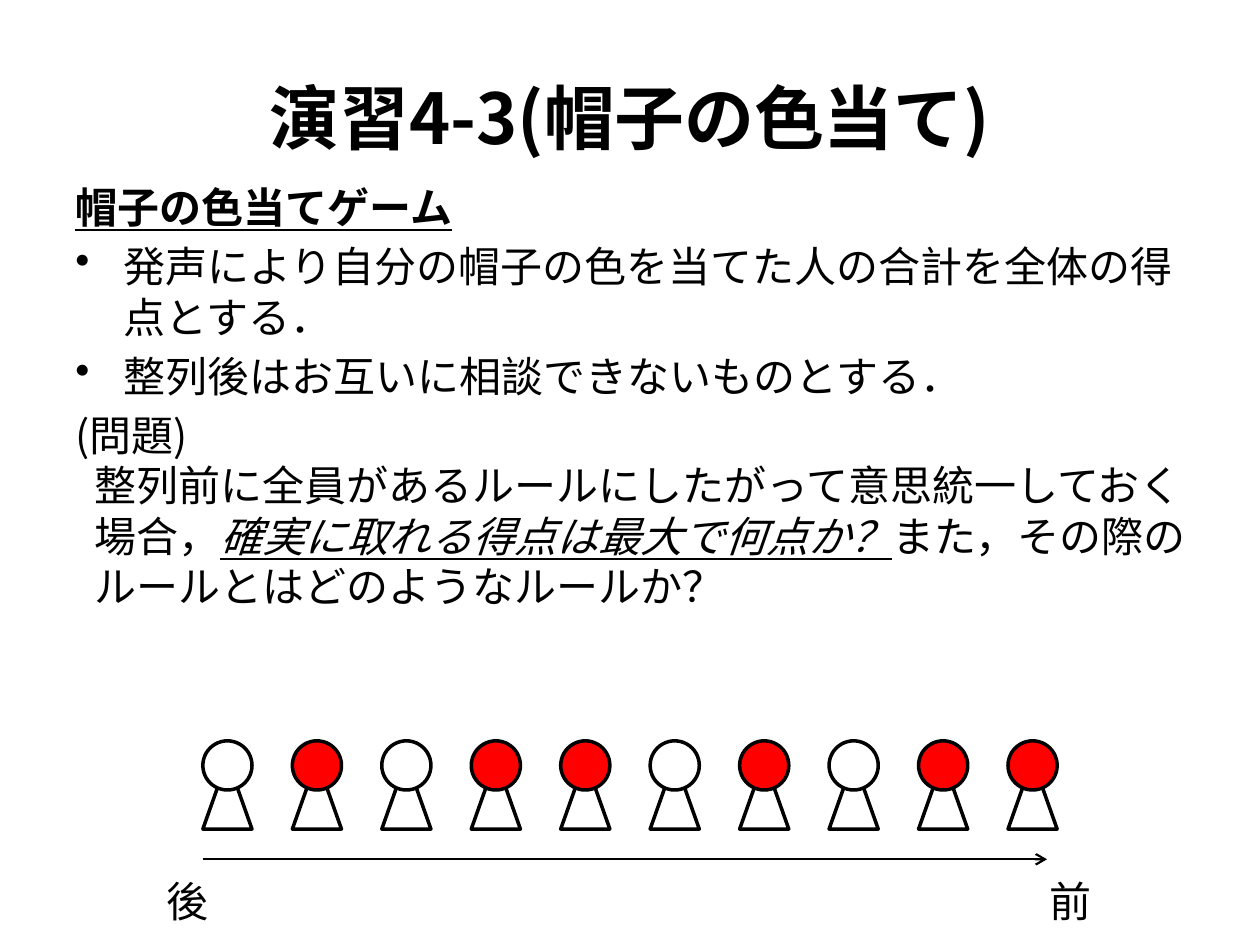
from lxml import etree
from pptx import Presentation
from pptx import util as u
from pptx.dml.color import RGBColor
from pptx.enum import shapes, text
from pptx.oxml import ns

FONT = "Noto Sans CJK JP"
BLACK, WHITE, RED = "000000", "FFFFFF", "FF0000"


def color(value):
    return RGBColor.from_string(value)


def format_runs(paragraph, size, bold=False):
    for run in paragraph.runs:
        run.font.size = u.Pt(size)
        run.font.bold = bold
        run.font.color.rgb = color(BLACK)
        run.font.name = FONT
        east_asian = etree.SubElement(run.font._element, ns.qn("a:ea"))
        east_asian.set("typeface", FONT)


presentation = Presentation()
presentation.slide_width, presentation.slide_height = u.Inches(10), u.Inches(7.5)
slide = presentation.slides.add_slide(presentation.slide_layouts[6])

# Title
title = slide.shapes.add_textbox(u.Inches(0.5), u.Inches(0.3), u.Inches(9), u.Inches(1.25))
title.text_frame.word_wrap = True
title.text_frame.vertical_anchor = text.MSO_ANCHOR.MIDDLE
title.text_frame.text = "演習4-3(帽子の色当て)"
title.text_frame.paragraphs[0].alignment = text.PP_ALIGN.CENTER
format_runs(title.text_frame.paragraphs[0], 40, bold=True)

# Rules and question: style, then runs (the second run is emphasised)
lines = [
    ("heading", ["帽子の色当てゲーム"]),
    ("bullet", ["発声により自分の帽子の色を当てた人の合計を全体の得点とする．"]),
    ("bullet", ["整列後はお互いに相談できないものとする．"]),
    ("plain", ["(問題)"]),
    ("question", ["整列前に全員があるルールにしたがって意思統一しておく"]),
    ("question", ["場合，", "確実に取れる得点は最大で何点か？", "また，その際の"]),
    ("question", ["ルールとはどのようなルールか？"]),
]
body = slide.shapes.add_textbox(u.Inches(0.5), u.Inches(1.39), u.Inches(9.15), u.Inches(5.98))
body.text_frame.word_wrap = True
for index, (style, parts) in enumerate(lines):
    paragraph = body.text_frame.paragraphs[0] if index == 0 else body.text_frame.add_paragraph()
    for part in parts:
        paragraph.add_run().text = part
    format_runs(paragraph, 24, bold=style == "heading")
    paragraph.line_spacing = u.Pt(28.9)
    paragraph.space_before = u.Pt(0 if style == "question" else 4.8)
    properties = paragraph._p.get_or_add_pPr()
    if style == "heading":
        paragraph.runs[0].font.underline = True
    elif style == "bullet":
        properties.set("marL", str(u.Inches(0.38)))
        properties.set("indent", str(u.Inches(-0.38)))
        etree.SubElement(properties, ns.qn("a:buChar")).set("char", "•")
    elif style == "question":
        properties.set("marL", str(u.Inches(0.15)))
    for run in paragraph.runs[1:2]:
        run.font.italic = run.font.underline = True

# Row of people, each a triangle body under a round hat
first, pitch, width = 1.61, 0.71, 0.39
hats = [WHITE, RED, WHITE, RED, RED, WHITE, RED, WHITE, RED, RED]
for column, hat in enumerate(hats):
    left = first + column * pitch
    for kind, top, height, fill in [
        (shapes.MSO_SHAPE.ISOSCELES_TRIANGLE, 6.03, 0.55, None),
        (shapes.MSO_SHAPE.OVAL, 5.88, width, hat),
    ]:
        shape = slide.shapes.add_shape(
            kind, u.Inches(left), u.Inches(top), u.Inches(width), u.Inches(height))
        shape.shadow.inherit = False
        shape.line.color.rgb = color(BLACK)
        shape.line.width = u.Pt(2)
        if fill:
            shape.fill.solid()
            shape.fill.fore_color.rgb = color(fill)
        else:
            shape.fill.background()

# Arrow from back to front
arrow = slide.shapes.add_connector(
    shapes.MSO_CONNECTOR.STRAIGHT,
    u.Inches(first), u.Inches(6.82), u.Inches(8.31), u.Inches(6.82))
arrow.line.color.rgb = color(BLACK)
arrow.line.width = u.Pt(1.25)
etree.SubElement(arrow.line._get_or_add_ln(), ns.qn("a:tailEnd")).set("type", "arrow")
etree.SubElement(arrow._element.spPr, ns.qn("a:effectLst"))

# Labels at the ends of the arrow
for left, label in [(8.23, "前"), (1.22, "後")]:
    box = slide.shapes.add_textbox(u.Inches(left), u.Inches(6.9), u.Inches(0.53), u.Inches(0.5))
    box.text_frame.text = label
    box.text_frame.paragraphs[0].line_spacing = u.Pt(28.9)
    format_runs(box.text_frame.paragraphs[0], 24)

presentation.save("out.pptx")
